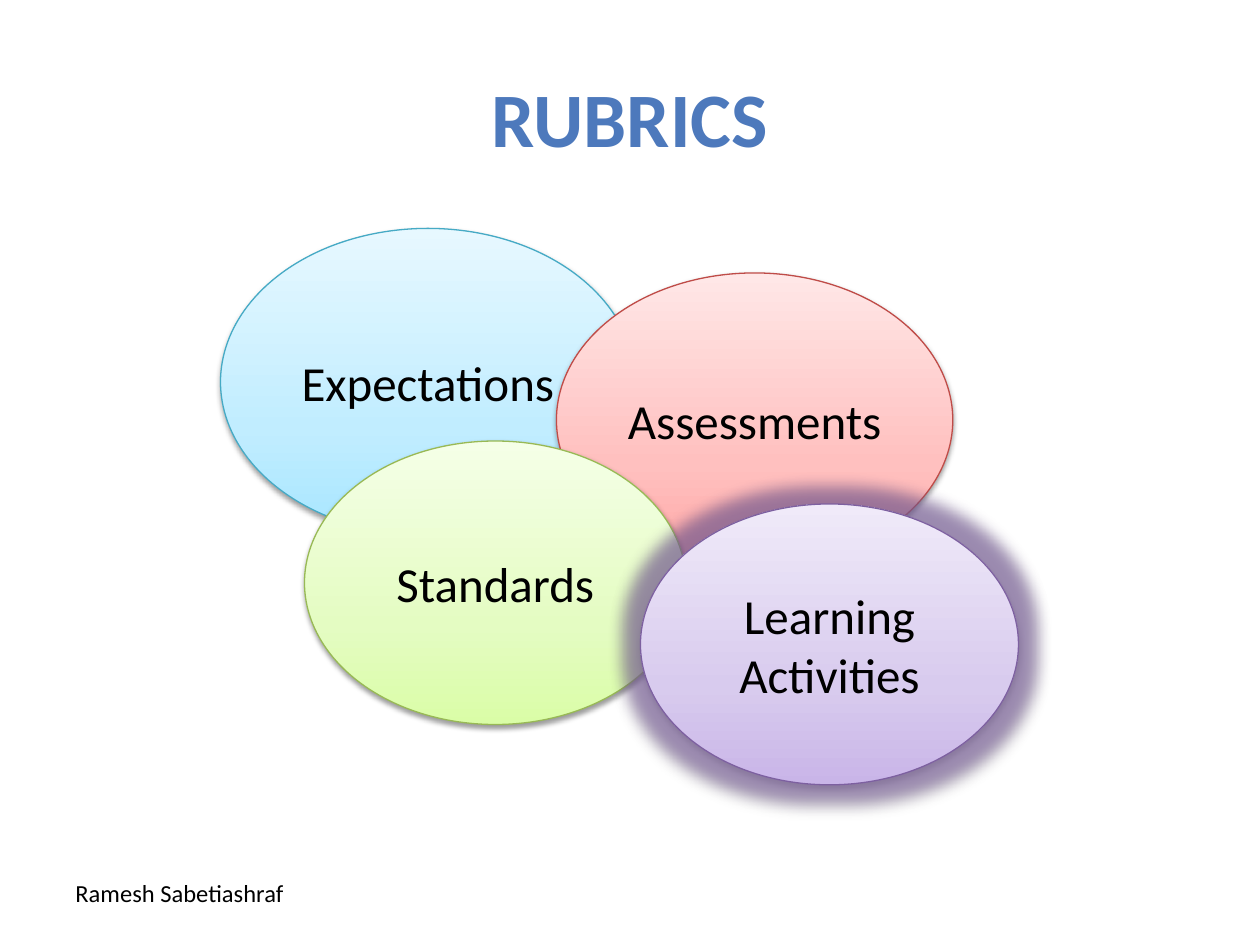
from lxml import etree
from pptx import Presentation
from pptx.dml.color import RGBColor
from pptx.enum import shapes, text
from pptx.oxml import parse_xml
from pptx.oxml.ns import nsdecls, qn
from pptx.util import Pt

FONT = "Calibri"
COLORS = {
    "white": "FFFFFF",
    "black": "000000",
    "title": "4D79BC",
    "glow": "8064A2",
}
# Gradient stops run from the bottom of each ellipse to its top
STOPS = (0, 35, 100)
BLUE = ("A7E6FF", "C1EDFF", "E7F8FF")
RED = ("FFA6A5", "FFC0BF", "FFE7E7")
GREEN = ("DAFDA7", "E4FCC2", "F5FFE7")
PURPLE = ("C9B5E8", "D8CBEE", "F0EAF9")

# Label, left, top, width, height, gradient, line colour, glow
ELLIPSES = [
    ("Expectations", 126, 130.5, 237, 175.5, BLUE, "46AAC5", False),
    ("Assessments", 318, 156, 226.5, 168, RED, "BF4C48", False),
    ("Standards", 174, 252, 218, 162, GREEN, "98B955", False),
    ("Learning Activities", 366, 288, 216, 160.5, PURPLE, "7D60A0", True),
]


def rgb(name):
    return RGBColor.from_string(COLORS[name])


def style_text(tf, size, color, align, bold=False):
    p = tf.paragraphs[0]
    p.alignment = align
    for r in p.runs:
        r.font.name = FONT
        r.font.size = Pt(size)
        r.font.bold = bold
        r.font.color.rgb = rgb(color)


def set_gradient(sp, colors):
    stops = "".join(
        f'<a:gs pos="{pos * 1000}"><a:srgbClr val="{color}"/></a:gs>'
        for pos, color in zip(STOPS, colors))
    grad = parse_xml(
        f'<a:gradFill {nsdecls("a")} rotWithShape="1"><a:gsLst>{stops}</a:gsLst>'
        '<a:lin ang="16200000" scaled="1"/></a:gradFill>')
    sp._element.spPr.find(qn("a:prstGeom")).addnext(grad)


def add_effect(effects, tag, color, alpha, **attrs):
    effect = etree.SubElement(
        effects, qn(tag), {k: str(v) for k, v in attrs.items()})
    clr = etree.SubElement(effect, qn("a:srgbClr"), val=COLORS[color])
    etree.SubElement(clr, qn("a:alpha"), val=str(alpha * 1000))


def set_effects(sp, glow):
    sp.shadow.inherit = False
    effects = sp._element.spPr.find(qn("a:effectLst"))
    if glow:
        add_effect(effects, "a:glow", "glow", 60, rad=Pt(18))
    add_effect(effects, "a:outerShdw", "black", 38, blurRad=Pt(3.1),
               dist=Pt(1.6), dir=5400000, rotWithShape=0)


def add_title(s, title):
    sp = s.shapes.title
    sp.left, sp.top, sp.width, sp.height = Pt(36), Pt(21.6), Pt(648), Pt(90)
    sp.fill.solid()
    sp.fill.fore_color.rgb = rgb("white")
    tf = sp.text_frame
    tf.text = title
    tf.vertical_anchor = text.MSO_ANCHOR.MIDDLE
    style_text(tf, 44, "title", text.PP_ALIGN.CENTER, bold=True)


def add_ellipse(s, label, left, top, width, height, colors, line, glow):
    sp = s.shapes.add_shape(shapes.MSO_SHAPE.OVAL, Pt(left), Pt(top),
                            Pt(width), Pt(height))
    set_gradient(sp, colors)
    sp.line.color.rgb = RGBColor.from_string(line)
    sp.line.width = Pt(0.75)
    set_effects(sp, glow)
    tf = sp.text_frame
    tf.text = label
    tf.word_wrap = True
    tf.margin_left = tf.margin_right = 0
    tf.vertical_anchor = text.MSO_ANCHOR.MIDDLE
    style_text(tf, 28, "black", text.PP_ALIGN.CENTER)


def add_author(s, name):
    sp = s.shapes.add_textbox(Pt(36), Pt(498), Pt(198), Pt(41))
    tf = sp.text_frame
    tf.text = name
    tf.word_wrap = True
    style_text(tf, 14, "black", text.PP_ALIGN.LEFT)


def main():
    prs = Presentation()
    prs.slide_width, prs.slide_height = Pt(720), Pt(540)
    s = prs.slides.add_slide(prs.slide_layouts[5])

    # Title and author line
    add_title(s, "RUBRICS")
    add_author(s, "Ramesh Sabetiashraf")

    # Overlapping ellipses, back to front
    for ellipse in ELLIPSES:
        add_ellipse(s, *ellipse)

    prs.save("out.pptx")


if __name__ == "__main__":
    main()
